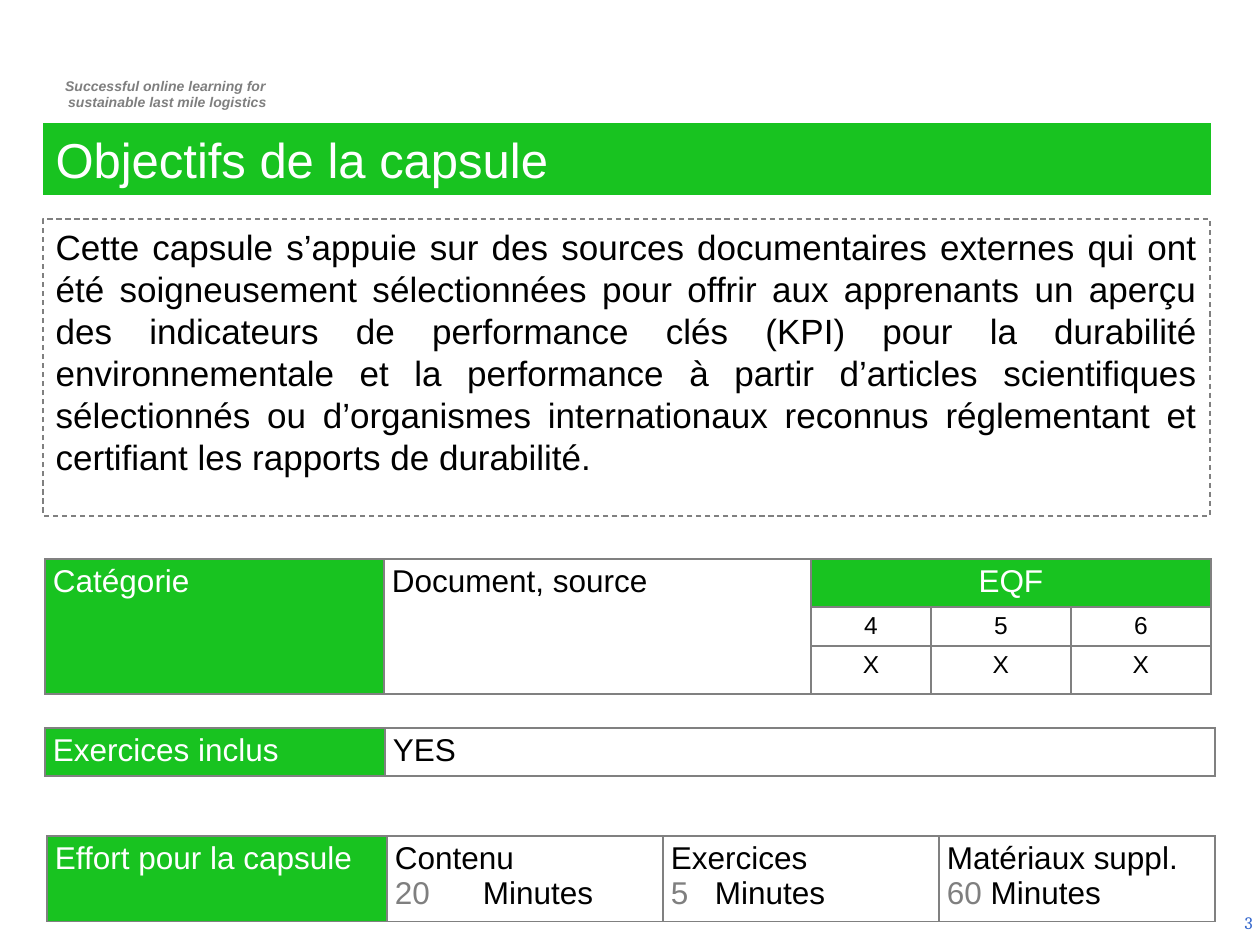
import pptx
import pptx.util
import pptx.dml.color
import pptx.enum.dml
import pptx.enum.text
import pptx.oxml
import pptx.oxml.ns
from dataclasses import dataclass
from lxml import etree


@dataclass(frozen=True)
class Theme:
    font: str = "Arial"
    number_font: str = "Cambria"
    green: str = "18C320"
    grey: str = "808080"
    muted: str = "7F7F7F"
    blue: str = "3366CC"
    black: str = "000000"
    white: str = "FFFFFF"
    title: int = 28
    body: int = 20
    label: int = 18
    level: int = 14
    number: int = 10
    tagline: int = 8


T = Theme()
ALIGN = pptx.enum.text.PP_ALIGN
PX = 914400 / 126

TAGLINE = ["Successful online learning for ", "sustainable last mile logistics"]
TITLE = "Objectifs de la capsule"
BODY = (
    "Cette capsule s’appuie sur des sources documentaires externes qui ont été "
    "soigneusement sélectionnées pour offrir aux apprenants un aperçu des indicateurs "
    "de performance clés (KPI) pour la durabilité environnementale et la performance à "
    "partir d’articles scientifiques sélectionnés ou d’organismes internationaux reconnus "
    "réglementant et certifiant les rapports de durabilité."
)
CATEGORY = [
    ["Catégorie", "Document, source", "EQF", "", ""],
    ["", "", "4", "5", "6"],
    ["", "", "X", "X", "X"],
]
EXERCISES = [["Exercices inclus", "YES"]]
EFFORT_LABEL = "Effort pour la capsule"
EFFORT = [
    ("Contenu", "20", "\tMinutes", 88),
    ("Exercices", "5", "\tMinutes", 44),
    ("Matériaux suppl.", "60", " Minutes", None),
]
SLIDE_NUMBER = "3"


def px(n):
    return pptx.util.Emu(round(n * PX))


def rgb(colour):
    return pptx.dml.color.RGBColor.from_string(colour)


def style(p, size, colour, align=ALIGN.LEFT, font=T.font):
    p.alignment = align
    p.font.size = pptx.util.Pt(size)
    p.font.name = font
    p.font.color.rgb = rgb(colour)


def place(sp, x, y, w, h):
    sp.left, sp.top, sp.width, sp.height = map(px, (x, y, w, h))


def add_text(s, box, lines):
    tf = s.shapes.add_textbox(*map(px, box)).text_frame
    tf.word_wrap = True
    tf.text = "\n".join(lines)
    return tf


def add_borders(cell):
    tc_pr = cell._tc.get_or_add_tcPr()
    for i, side in enumerate(("lnL", "lnR", "lnT", "lnB")):
        ln = pptx.oxml.parse_xml(
            f'<a:{side} {pptx.oxml.ns.nsdecls("a")} w="12700"><a:solidFill>'
            f'<a:srgbClr val="{T.grey}"/></a:solidFill></a:{side}>'
        )
        tc_pr.insert(i, ln)


def add_table(s, x, y, cols, rows, texts, green):
    size = map(px, (x, y, sum(cols), sum(rows)))
    table = s.shapes.add_table(len(rows), len(cols), *size).table
    table.first_row = table.horz_banding = False
    for column, w in zip(table.columns, cols):
        column.width = px(w)
    for row, h in zip(table.rows, rows):
        row.height = px(h)
    for r, line in enumerate(texts):
        for c, text in enumerate(line):
            cell = table.cell(r, c)
            cell.margin_left = cell.margin_right = px(8)
            cell.margin_top = cell.margin_bottom = px(5)
            cell.text = text
            colour = T.black
            if (r, c) in green:
                cell.fill.solid()
                cell.fill.fore_color.rgb = rgb(T.green)
                colour = T.white
            else:
                cell.fill.background()
            add_borders(cell)
            style(cell.text_frame.paragraphs[0], T.label, colour, ALIGN.JUSTIFY)
    return table


def add_duration(cell, label, amount, unit, tab):
    tf = cell.text_frame
    tf.text = label
    p = tf.add_paragraph()
    if tab:
        tabs = etree.SubElement(p._p.get_or_add_pPr(), pptx.oxml.ns.qn("a:tabLst"))
        etree.SubElement(tabs, pptx.oxml.ns.qn("a:tab"), pos=str(px(tab)), algn="l")
    for text, colour in ((amount, T.muted), (unit, T.black)):
        r = p.add_run()
        r.text = text
        r.font.color.rgb = rgb(colour)
    for p in tf.paragraphs:
        style(p, T.label, T.black)


def main():
    prs = pptx.Presentation()
    prs.slide_width, prs.slide_height = px(1260), px(945)
    s = prs.slides.add_slide(prs.slide_layouts[1])

    for p in add_text(s, (37, 71, 256, 47), TAGLINE).paragraphs:
        p._p.get_or_add_pPr().set("marL", str(px(5)))
        style(p, T.tagline, T.muted, ALIGN.CENTER)
        p.font.bold = p.font.italic = True

    title, body = s.placeholders
    place(title, 43, 123, 1168, 72)
    title.fill.solid()
    title.fill.fore_color.rgb = rgb(T.green)
    title.text_frame.text = TITLE
    style(title.text_frame.paragraphs[0], T.title, T.white)

    place(body, 43, 219, 1167, 297)
    body.line.color.rgb = rgb(T.grey)
    body.line.width = pptx.util.Pt(0.75)
    body.line.dash_style = pptx.enum.dml.MSO_LINE.DASH
    body.text_frame.text = BODY
    p = body.text_frame.paragraphs[0]
    p_pr = p._p.get_or_add_pPr()
    p_pr.set("marL", "0")
    p_pr.set("indent", "0")
    etree.SubElement(p_pr, pptx.oxml.ns.qn("a:buNone"))
    p.space_before = pptx.util.Pt(0)
    style(p, T.body, T.black, ALIGN.JUSTIFY)

    category = add_table(s, 45, 559, [339, 427, 120, 140, 140], [46, 39, 47],
                         CATEGORY, {(0, 0), (0, 2)})
    for c in (2, 3, 4):
        for r in (1, 2):
            style(category.cell(r, c).text_frame.paragraphs[0], T.level, T.black, ALIGN.CENTER)
    category.cell(0, 2).text_frame.paragraphs[0].alignment = ALIGN.CENTER
    for first, last in (((0, 0), (2, 0)), ((0, 1), (2, 1)), ((0, 2), (0, 4))):
        category.cell(*first).merge(category.cell(*last))

    add_table(s, 45, 728, [340, 830], [47], EXERCISES, {(0, 0)})

    labels = [[EFFORT_LABEL] + [item[0] for item in EFFORT]]
    effort = add_table(s, 47, 836, [340, 276, 276, 276], [84], labels, {(0, 0)})
    for c, item in enumerate(EFFORT, 1):
        add_duration(effort.cell(0, c), *item)

    tf = add_text(s, (971, 898, 294, 50), [SLIDE_NUMBER])
    tf.vertical_anchor = pptx.enum.text.MSO_ANCHOR.MIDDLE
    style(tf.paragraphs[0], T.number, T.blue, ALIGN.RIGHT, T.number_font)
    prs.save("out.pptx")


if __name__ == "__main__":
    main()
